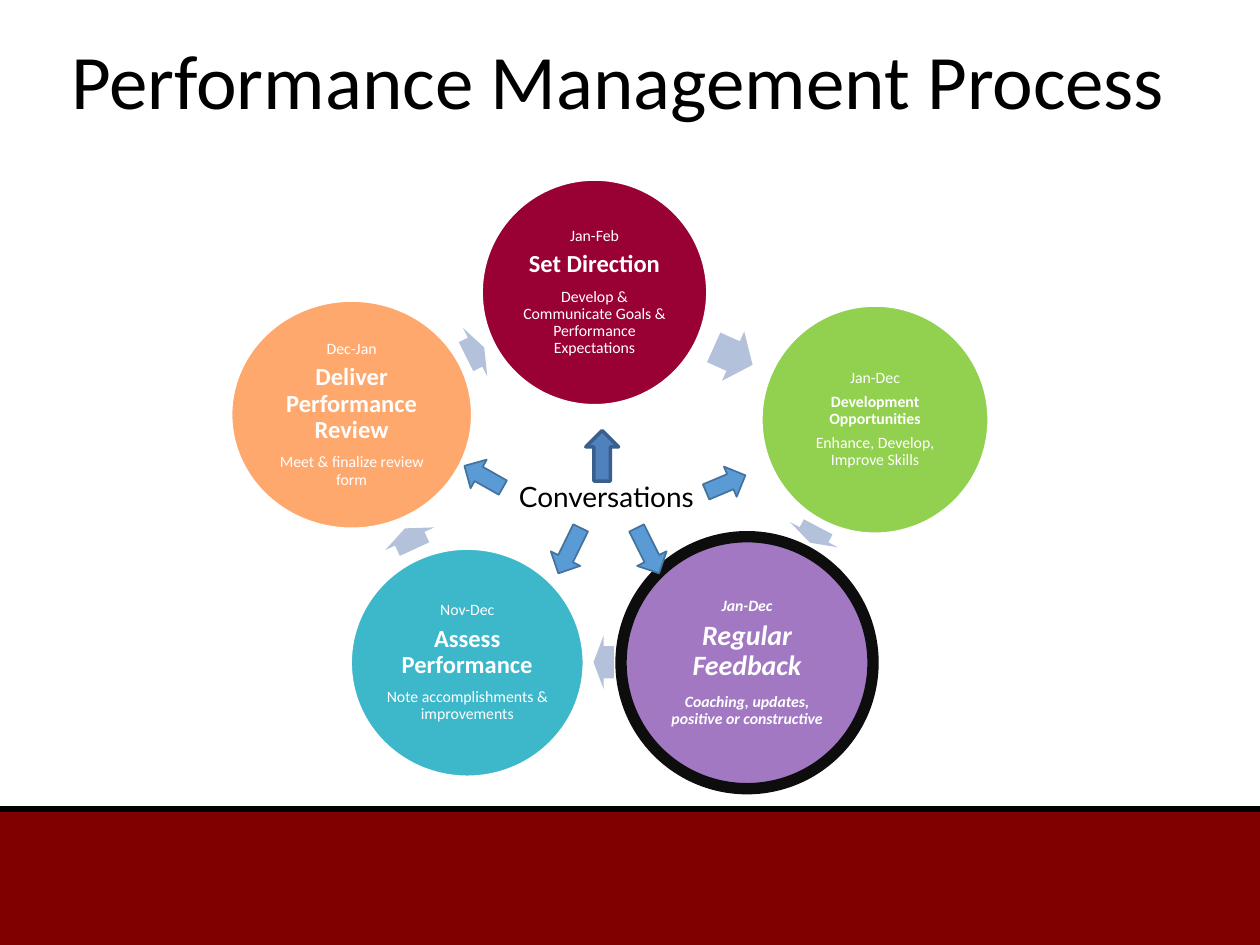
"""Build the Performance Management Process cycle slide."""
from lxml import etree
from pptx import Presentation
from pptx.dml.color import RGBColor
from pptx.enum.shapes import MSO_CONNECTOR, MSO_SHAPE
from pptx.enum.text import MSO_ANCHOR, PP_ALIGN
from pptx.oxml.ns import qn
from pptx.util import Cm, Pt

RECT, OVAL = MSO_SHAPE.RECTANGLE, MSO_SHAPE.OVAL
RIGHT_ARROW, UP_ARROW = MSO_SHAPE.RIGHT_ARROW, MSO_SHAPE.UP_ARROW
STRAIGHT = MSO_CONNECTOR.STRAIGHT
TOP, MIDDLE, CENTER = MSO_ANCHOR.TOP, MSO_ANCHOR.MIDDLE, PP_ALIGN.CENTER

WHITE = RGBColor(0xFF, 0xFF, 0xFF)
BLACK = RGBColor(0, 0, 0)
NEAR_BLACK = RGBColor(0x0D, 0x0D, 0x0D)
MAROON = RGBColor(0x80, 0, 0)
CRIMSON = RGBColor(0x99, 0, 0x33)
GREEN = RGBColor(0x92, 0xD0, 0x50)
PURPLE = RGBColor(0x70, 0x30, 0xA0)
TEAL = RGBColor(0x3D, 0xB8, 0xCB)
ORANGE = RGBColor(0xFF, 0x66, 0)
PALE_BLUE = RGBColor(0xB3, 0xC1, 0xDB)
BLUE, BLUE_LINE = RGBColor(0x5B, 0x9B, 0xD5), RGBColor(0x43, 0x73, 0x9E)
DEEP_BLUE, DEEP_LINE = RGBColor(0x4F, 0x81, 0xBD), RGBColor(0x3A, 0x5F, 0x8C)

SLIDE_W, SLIDE_H, BAND_TOP = 25.4, 19.05, 16.31
TITLE = "Performance Management Process"
HUB = "Conversations"

STAGES = [
    dict(box=(9.7, 3.61, 4.57, 4.57), fill=CRIMSON, size=14,
         text=("Jan-Feb", "Set Direction",
               "Develop & Communicate Goals & Performance Expectations"),
         arrow=(14.78, 7.18, 0.86, 24.3)),
    dict(box=(15.34, 6.15, 4.6, 4.62), fill=GREEN, size=9,
         text=("Jan-Dec", "Development Opportunities",
               "Enhance, Develop, Improve Skills"),
         arrow=(16.41, 10.78, 0.36, 117.8)),
    dict(box=(12.52, 10.82, 5.08, 5.08), fill=PURPLE, size=16, alpha=65,
         text=("Jan-Dec", "Regular Feedback",
               "Coaching, updates, positive or constructive"),
         arrow=(12.17, 13.35, 0.41, 180), line=(NEAR_BLACK, 6.5), strong=True),
    dict(box=(7.06, 11.05, 4.72, 4.62), fill=TEAL, size=14,
         text=("Nov-Dec", "Assess Performance",
               "Note accomplishments & improvements"),
         arrow=(8.26, 10.86, 0.46, 245.2)),
    dict(box=(4.65, 6.05, 4.88, 4.62), fill=ORANGE, size=14, alpha=57,
         text=("Dec-Jan", "Deliver Performance Review",
               "Meet & finalize review form"),
         arrow=(9.58, 7.1, 0.41, 333.4)),
]

HUB_ARROWS = [
    (12.14, 9.19, 1.02, 0, DEEP_BLUE, (DEEP_LINE, 2)),
    (13.06, 11.1, 1.02, 153.6, BLUE, (BLUE_LINE, 1)),
    (11.48, 11.1, 1.02, 206.1, BLUE, (BLUE_LINE, 1)),
    (9.75, 9.61, 0.89, 299.5, BLUE, (BLUE_LINE, 1)),
    (14.63, 9.75, 0.86, 67.1, BLUE, (BLUE_LINE, 1)),
]


def add_shape(s, kind, box, fill, line=None, alpha=None):
    sp = s.shapes.add_shape(kind, *map(Cm, box))
    sp.shadow.inherit = False
    sp.fill.solid()
    sp.fill.fore_color.rgb = fill
    if alpha:
        color = sp.fill._xPr.find(".//" + qn("a:srgbClr"))
        etree.SubElement(color, qn("a:alpha"), val=str(alpha * 1000))
    if line:
        sp.line.color.rgb, sp.line.width = line[0], Pt(line[1])
    else:
        sp.line.fill.background()
    return sp


def add_arrow(s, kind, x, y, w, h, angle, fill, line=None):
    sp = add_shape(s, kind, (x - w / 2, y - h / 2, w, h), fill, line)
    sp.rotation = angle
    return sp


def style(p, size, name, color):
    p.alignment = CENTER
    p.font.size, p.font.name, p.font.color.rgb = Pt(size), name, color


def add_stage(s, stage):
    sp = add_shape(s, OVAL, stage["box"], stage["fill"],
                   stage.get("line", (WHITE, 2)), stage.get("alpha"))
    tf = sp.text_frame
    tf.word_wrap, tf.vertical_anchor = True, MIDDLE
    tf.margin_left = tf.margin_right = tf.margin_top = tf.margin_bottom = Cm(0.03)
    tf.text = "\n".join(stage["text"])
    strong = stage.get("strong", False)
    for i, p in enumerate(tf.paragraphs):
        size = stage["size"] if i == 1 else 9
        style(p, size, "Calibri", WHITE)
        p.font.bold, p.font.italic = strong or i == 1, strong
        p.line_spacing, p.space_after = 0.9, Pt(round(size * 0.42, 1))
    x, y, w, angle = stage["arrow"]
    arrow = add_arrow(s, RIGHT_ARROW, x, y, w, 1.09, angle, PALE_BLUE)
    arrow.adjustments[0], arrow.adjustments[1] = 0.6, 0.5


def main():
    prs = Presentation()
    prs.slide_width, prs.slide_height = Cm(SLIDE_W), Cm(SLIDE_H)
    s = prs.slides.add_slide(prs.slide_layouts[5])

    title = s.shapes.title
    title.left, title.top, title.width, title.height = map(Cm, (1.04, 0, 22.86, 3.18))
    title.text_frame.text = TITLE
    title.text_frame.vertical_anchor = MIDDLE
    style(title.text_frame.paragraphs[0], 44, "Calibri", BLACK)

    add_shape(s, RECT, (0, BAND_TOP, SLIDE_W, SLIDE_H - BAND_TOP), MAROON, (MAROON, 2))
    rule = s.shapes.add_connector(STRAIGHT, 0, Cm(BAND_TOP), Cm(SLIDE_W), Cm(BAND_TOP))
    rule.line.color.rgb, rule.line.width = BLACK, Pt(3)
    etree.SubElement(rule._element.spPr, qn("a:effectLst"))

    for stage in STAGES:
        add_stage(s, stage)

    hub = add_shape(s, RECT, (10.03, 9.55, 4.39, 1.04), WHITE)
    hub.text_frame.text = HUB
    hub.text_frame.word_wrap, hub.text_frame.vertical_anchor = True, TOP
    style(hub.text_frame.paragraphs[0], 16, "Lato", BLACK)
    for x, y, h, angle, fill, line in HUB_ARROWS:
        add_arrow(s, UP_ARROW, x, y, 0.66, h, angle, fill, line)

    prs.save("out.pptx")


if __name__ == "__main__":
    main()
